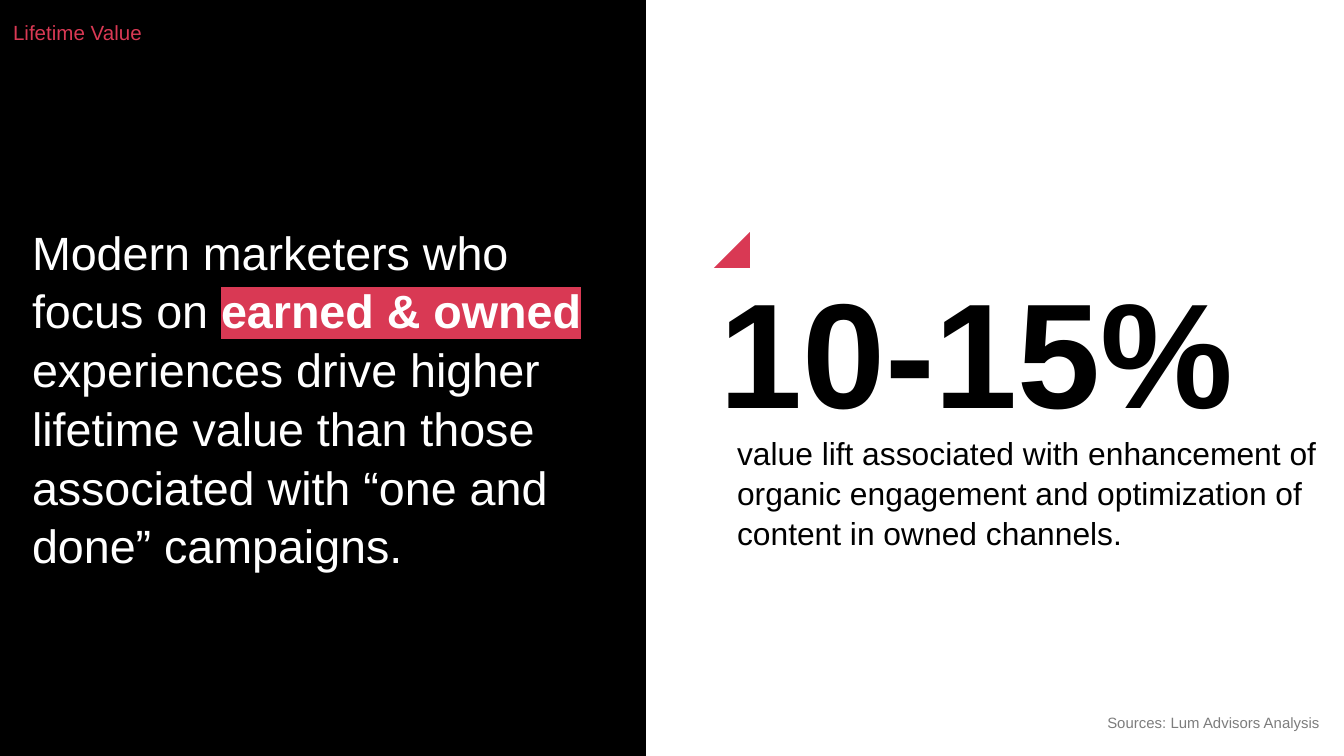
from pptx import Presentation
from pptx.dml.color import RGBColor
from pptx.enum.shapes import MSO_SHAPE
from pptx.enum.text import MSO_ANCHOR, MSO_AUTO_SIZE, PP_ALIGN
from pptx.util import Emu, Pt
from lxml.etree import SubElement
from pptx.oxml.ns import qn

PX = 914400 / 134.4
INSET = 13
COLORS = {"black": "000000", "white": "FFFFFF", "accent": "D93954", "muted": "7D7D7D"}


def px(length):
    return Emu(round(length * PX))


def rgb(name):
    return RGBColor.from_string(COLORS[name])


def set_attributes(target, values):
    for name, value in values.items():
        setattr(target, name, value)


def place(element, box):
    set_attributes(element, dict(zip(("left", "top", "width", "height"), map(px, box))))


def highlight(run, color):
    mark = SubElement(run.font._element, qn("a:highlight"))
    SubElement(mark, qn("a:srgbClr")).set("val", COLORS[color])
    run.font._element.find(qn("a:solidFill")).addnext(mark)


def write(holder, runs, size, color, align=PP_ALIGN.LEFT, spacing=1.0):
    frame = holder.text_frame
    margins = {f"margin_{side}": px(INSET) for side in ("left", "top", "right", "bottom")}
    set_attributes(frame, {
        "word_wrap": True,
        "auto_size": MSO_AUTO_SIZE.NONE,
        "vertical_anchor": MSO_ANCHOR.MIDDLE,
        **margins,
    })
    paragraph = frame.paragraphs[0]
    set_attributes(paragraph, {"alignment": align, "line_spacing": spacing})
    for wording, bold, marker in runs:
        run = paragraph.add_run()
        run.text = wording
        set_attributes(run.font, {"name": "Arial", "size": Pt(size), "bold": bold})
        run.font.color.rgb = rgb(color)
        if marker:
            highlight(run, marker)


def add_text(slide, box, runs, size, color, **layout):
    write(slide.shapes.add_textbox(*map(px, box)), runs, size, color, **layout)


def add_block(slide, kind, box, color, rotation=0):
    block = slide.shapes.add_shape(kind, *map(px, box))
    block.fill.solid()
    block.fill.fore_color.rgb = rgb(color)
    block.line.fill.background()
    block.shadow.inherit = False
    block.rotation = rotation
    return block


def add_title(slide, panel, box, wording):
    title = slide.shapes.title
    panel.element.addnext(title.element)
    place(title, box)
    write(title, [(wording, False, None)], 11, "accent")


def main():
    deck = Presentation()
    set_attributes(deck, {"slide_width": px(1344), "slide_height": px(756)})
    slide = deck.slides.add_slide(deck.slide_layouts[5])
    slide.background.fill.solid()
    slide.background.fill.fore_color.rgb = rgb("white")

    panel = add_block(slide, MSO_SHAPE.RECTANGLE, (0, 0, 646, 756), "black")
    add_title(slide, panel, (0, 0, 661, 65), "Lifetime Value")
    add_text(slide, (687, 700, 646, 46),
             [("Sources: Lum Advisors Analysis", False, None)],
             8, "muted", align=PP_ALIGN.RIGHT)

    statement = [
        ("Modern marketers who focus on ", False, None),
        ("earned & owned ", True, "accent"),
        ("experiences drive higher lifetime value than those associated with "
         "“one and done” campaigns.", False, None),
    ]
    add_text(slide, (19, 71, 609, 652), statement, 25, "white", spacing=1.05)

    add_text(slide, (672, 249, 609, 200), [("10-15%", True, None)],
             80, "black", align=PP_ALIGN.CENTER)
    add_block(slide, MSO_SHAPE.RIGHT_TRIANGLE, (714, 232, 36, 36), "accent", rotation=270)
    add_text(slide, (724, 449, 609, 85),
             [("value lift associated with enhancement of organic engagement and "
               "optimization of content in owned channels.", False, None)],
             17, "black", spacing=1.05)

    deck.save("out.pptx")


if __name__ == "__main__":
    main()
